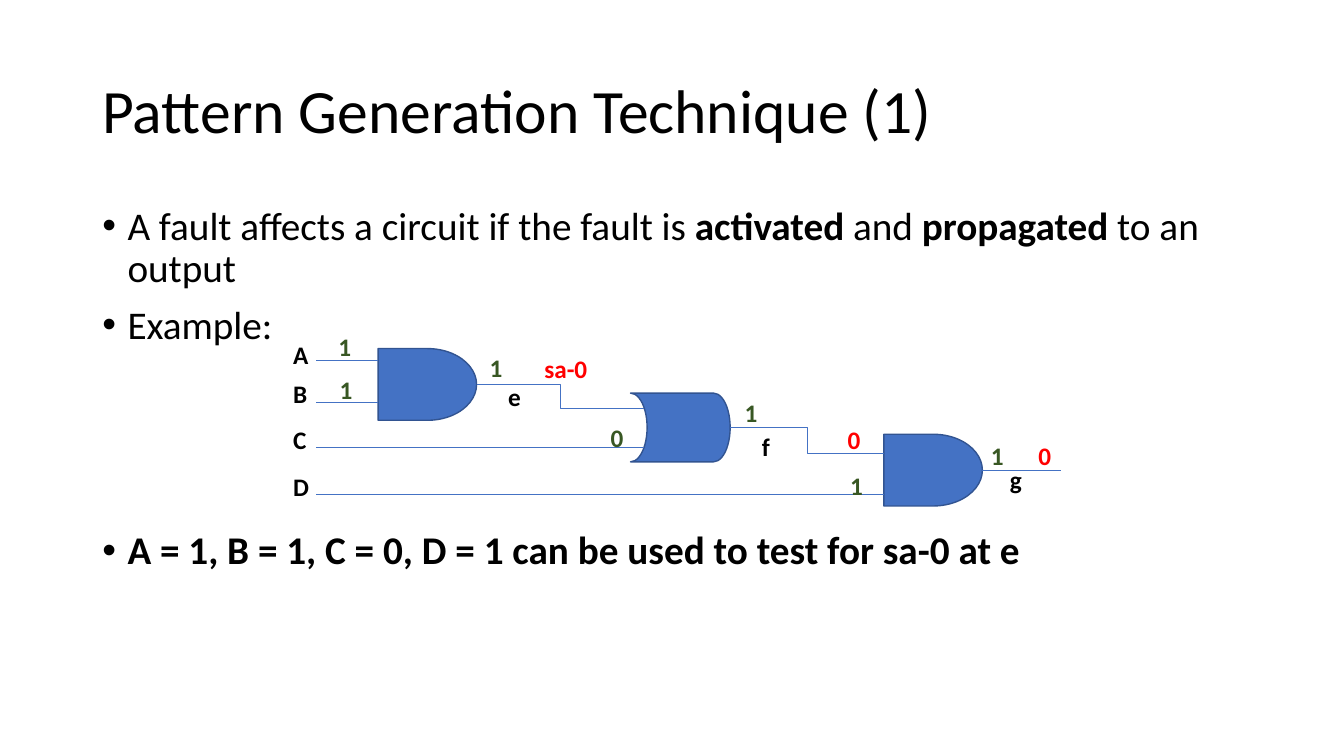
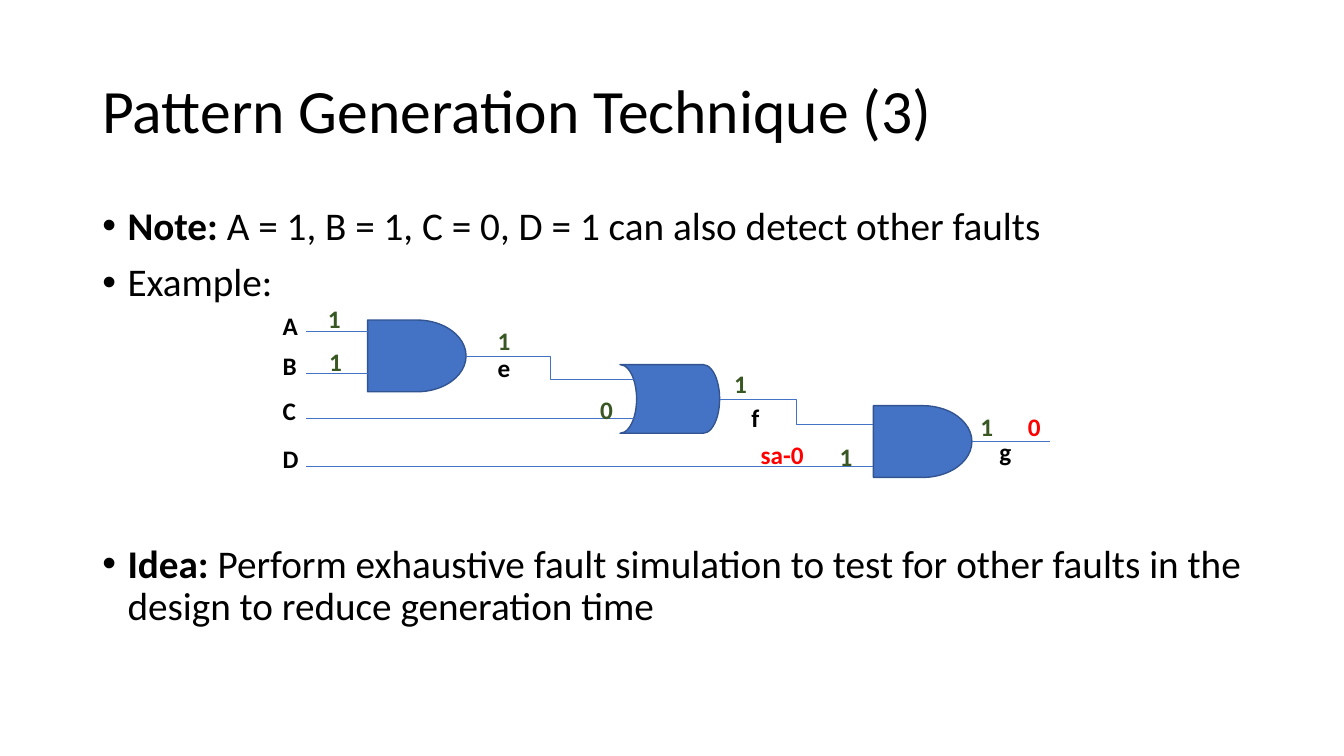
from dataclasses import dataclass

from lxml.etree import SubElement
from pptx import Presentation
from pptx.dml.color import RGBColor
from pptx.enum.shapes import MSO_CONNECTOR, MSO_SHAPE
from pptx.enum.text import MSO_ANCHOR, MSO_AUTO_SIZE, PP_ALIGN
from pptx.oxml.ns import qn
from pptx.util import Inches, Pt


@dataclass(frozen=True)
class Theme:
    font: str = "Calibri"
    ink: RGBColor = RGBColor(0, 0, 0)
    gate: RGBColor = RGBColor(0x44, 0x72, 0xC4)
    outline: RGBColor = RGBColor(0x32, 0x54, 0x91)
    good: RGBColor = RGBColor(0x38, 0x57, 0x23)
    faulty: RGBColor = RGBColor(0xFF, 0, 0)
    title_size: int = 44
    body_size: int = 28
    label_size: int = 18
    wire_width: float = 0.5
    outline_width: float = 1
    line_spacing: float = 0.9


THEME = Theme()
UNITS_PER_INCH = 12
TITLE_AREA = (11, 4.8, 138, 17.4)
BODY_AREA = (11, 24, 138, 57.1)
AND_SIZE = (11.72, 8.54)
OR_SIZE = (11.86, 8.18)
OR_PLACE = (30.04, 5.3)
OUTPUT_AND_PLACE = (60.2, 10.2)
OR_INPUT = 31.68
INPUT_START = -7.35
INPUT_LABEL = -11.3

INPUTS = [
    ("A", 1.35, 0, -1.7),
    ("B", 6.35, 0, 3),
    ("C", 11.75, OR_INPUT, 8.4),
    ("D", 17.4, OUTPUT_AND_PLACE[0], 14.05),
]
NET_LABELS = [("e", 14.3, 3.3), ("f", 44.5, 9.2), ("g", 74, 13.2)]
GOOD_VALUES = [
    ("1", -5.9, -2.6),
    ("1", -5.75, 2.5),
    ("0", 26.5, 8.2),
    ("1", 42.45, 5.2),
    ("1", 55, 13.9),
    ("1", 71.75, 10.3),
]
OUTPUT_FAULT = ("0", 77.4, 10.3)


def units(value):
    return Inches(value / UNITS_PER_INCH)


def assign(target, values):
    for name, value in values.items():
        setattr(target, name, value)


class SlideBuilder:
    def __init__(self, deck, theme):
        self.deck = deck
        self.theme = theme
        self.page = None
        self.origin = (0, 0)

    def place(self, column, row):
        return units(self.origin[0] + column), units(self.origin[1] + row)

    def add_span(self, para, text, size, color, bold=False):
        span = para.add_run()
        span.text = text
        assign(span.font, {"name": self.theme.font, "size": Pt(size), "bold": bold})
        span.font.color.rgb = color

    def start(self, heading):
        self.page = self.deck.slides.add_slide(self.deck.slide_layouts[5])
        self.origin = (0, 0)
        title = self.page.shapes.title
        assign(title, dict(zip(("left", "top", "width", "height"), map(units, TITLE_AREA))))
        assign(title.text_frame, {
            "word_wrap": True,
            "auto_size": MSO_AUTO_SIZE.NONE,
            "vertical_anchor": MSO_ANCHOR.MIDDLE,
        })
        para = title.text_frame.paragraphs[0]
        assign(para, {"alignment": PP_ALIGN.LEFT, "line_spacing": self.theme.line_spacing})
        self.add_span(para, heading, self.theme.title_size, self.theme.ink)

    def bullets(self, items):
        box = self.page.shapes.add_textbox(*map(units, BODY_AREA))
        box.text_frame.word_wrap = True
        for index, (gap, spans) in enumerate(items):
            para = box.text_frame.add_paragraph() if index else box.text_frame.paragraphs[0]
            properties = para._p.get_or_add_pPr()
            properties.set("marL", str(Inches(0.25)))
            properties.set("indent", str(-Inches(0.25)))
            SubElement(properties, qn("a:buFont")).set("typeface", "Arial")
            SubElement(properties, qn("a:buChar")).set("char", "•")
            assign(para, {"line_spacing": self.theme.line_spacing, "space_before": Pt(gap)})
            for text, bold in spans:
                self.add_span(para, text, self.theme.body_size, self.theme.ink, bold)

    def label(self, text, column, row, color):
        width = 2.4 + 1.6 * len(text)
        box = self.page.shapes.add_textbox(*self.place(column, row), units(width), units(4.8))
        box.text_frame.word_wrap = True
        self.add_span(box.text_frame.paragraphs[0], text, self.theme.label_size, color, True)

    def gate(self, preset, place, size, rotation=0):
        gate = self.page.shapes.add_shape(preset, *self.place(*place), *map(units, size))
        gate.rotation = rotation
        gate.shadow.inherit = False
        gate.fill.solid()
        gate.fill.fore_color.rgb = self.theme.gate
        gate.line.color.rgb = self.theme.outline
        gate.line.width = Pt(self.theme.outline_width)
        return gate

    def wire(self, start, end, kind=MSO_CONNECTOR.STRAIGHT):
        wire = self.page.shapes.add_connector(kind, *start, *end)
        wire.line.color.rgb = self.theme.gate
        wire.line.width = Pt(self.theme.wire_width)
        SubElement(wire._element.spPr, qn("a:effectLst"))
        return wire

    def output(self, gate, end, kind=MSO_CONNECTOR.STRAIGHT, glued=True):
        start = gate.left + gate.width, gate.top + gate.height // 2
        wire = self.wire(start, self.place(*end), kind)
        if glued:
            wire.begin_connect(gate, 3)

    def circuit(self, origin, e_value, faults):
        self.origin = origin
        first_and = self.gate(MSO_SHAPE.FLOWCHART_DELAY, (0, 0), AND_SIZE)
        or_gate = self.gate(MSO_SHAPE.FLOWCHART_STORED_DATA, OR_PLACE, OR_SIZE, 180)
        last_and = self.gate(MSO_SHAPE.FLOWCHART_DELAY, OUTPUT_AND_PLACE, AND_SIZE)
        for name, row, end, label_row in INPUTS:
            self.wire(self.place(INPUT_START, row), self.place(end, row))
            self.label(name, INPUT_LABEL, label_row, self.theme.ink)
        self.output(first_and, (OR_INPUT, 7.08), MSO_CONNECTOR.ELBOW)
        self.output(or_gate, (OUTPUT_AND_PLACE[0], 12.48), MSO_CONNECTOR.ELBOW, False)
        self.output(last_and, (81.25, OUTPUT_AND_PLACE[1] + AND_SIZE[1] / 2))
        groups = [
            (NET_LABELS, self.theme.ink),
            (GOOD_VALUES + [e_value], self.theme.good),
            (faults + [OUTPUT_FAULT], self.theme.faulty),
        ]
        for labels, color in groups:
            for label in labels:
                self.label(*label, color)


def main():
    deck = Presentation()
    assign(deck, {"slide_width": Inches(13.33), "slide_height": Inches(7.5)})
    builder = SlideBuilder(deck, THEME)

    builder.start("Pattern Generation Technique (1)")
    builder.bullets([
        (0, [
            ("A fault affects a circuit if the fault is ", False),
            ("activated", True),
            (" and ", False),
            ("propagated", True),
            (" to an output", False),
        ]),
        (10, [("Example:", False)]),
        (131, [("A = 1, B = 1, C = 0, D = 1 can be used to test for sa-0 at e", True)]),
    ])
    builder.circuit((45, 41.5), ("1", 12.1, -0.2), [("sa-0", 18.6, 0), ("0", 54.7, 8.4)])

    builder.start("Pattern Generation Technique (3)")
    builder.bullets([
        (0, [
            ("Note: ", True),
            ("A = 1, B = 1, C = 0, D = 1 can also detect other faults", False),
        ]),
        (10, [("Example:", False)]),
        (171, [
            ("Idea:", True),
            (" Perform exhaustive fault simulation to test for other faults in"
             " the design to reduce generation time", False),
        ]),
    ])
    builder.circuit((43.75, 38.1), ("1", 14.3, 0), [("sa-0", 45.6, 13.6)])

    deck.save("out.pptx")


if __name__ == "__main__":
    main()
